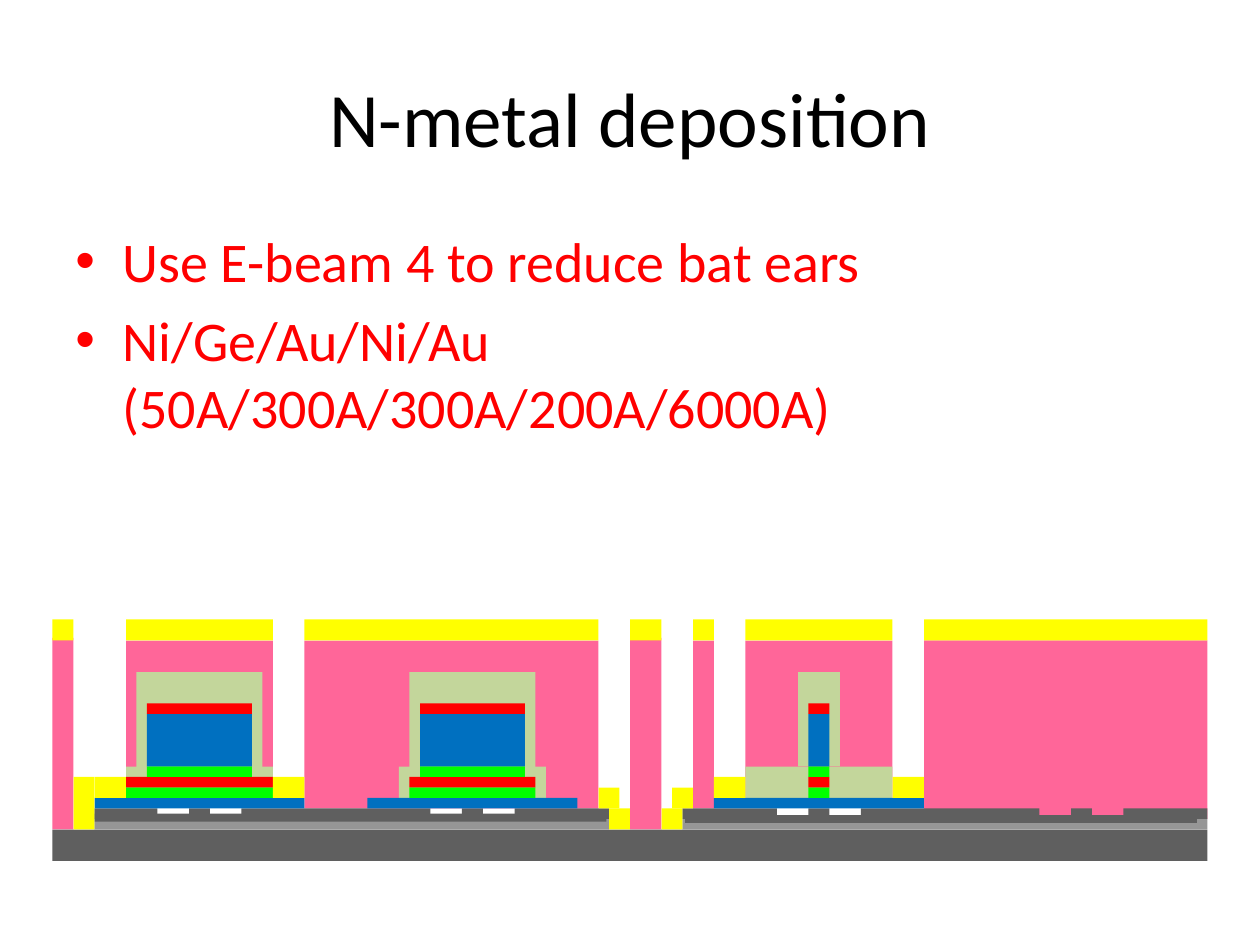
from pptx import Presentation
from pptx.dml.color import RGBColor
from pptx.enum.shapes import MSO_SHAPE
from pptx.enum.text import MSO_ANCHOR, PP_ALIGN
from pptx.oxml.xmlchemy import OxmlElement
from pptx.util import Emu, Pt

RECT = MSO_SHAPE.RECTANGLE
TOP, MIDDLE = MSO_ANCHOR.TOP, MSO_ANCHOR.MIDDLE
LEFT, CENTER = PP_ALIGN.LEFT, PP_ALIGN.CENTER

EMU_PER_PX = 9525  # 96 px to the inch; the drawing sits on an 8 px grid
FONT = "Calibri"

RESIST = "FF6699"
PASSIVATION = "C3D69B"
DARK_GREY = "5F5F5F"
LIGHT_GREY = "969696"
BLUE = "0070C0"
RED = "FF0000"
GREEN = "00FF00"
METAL = "FFFF00"

# Spans (left, width) shared by several layers
MESAS = [(112, 80), (320, 80), (616, 16)]
BASES = [(96, 112), (312, 96), (616, 16)]
METAL_TOPS = [(40, 16), (96, 112), (232, 224), (480, 24),
              (528, 16), (568, 112), (704, 216)]

# Layers from back to front: colour, top, height, spans
LAYERS = [
    # Photoresist
    (RESIST, 488, 120, [(96, 112), (568, 112)]),
    (RESIST, 488, 128, [(232, 224), (528, 16)]),
    (RESIST, 488, 136, [(704, 216)]),
    (RESIST, 486, 146, [(40, 16), (480, 24)]),
    # Passivation
    (PASSIVATION, 512, 72, [(608, 32)]),
    (PASSIVATION, 512, 80, [(104, 96), (312, 96)]),
    (PASSIVATION, 584, 24, [(96, 112), (304, 112), (568, 112)]),
    # Substrate and lower layers
    (LIGHT_GREY, 624, 8, [(72, 392), (520, 400)]),
    (DARK_GREY, 616, 8, [(72, 48), (144, 16), (184, 144), (352, 16),
                         (392, 72), (520, 72), (616, 16), (656, 136),
                         (816, 16), (856, 64)]),
    (DARK_GREY, 632, 24, [(40, 880)]),
    (DARK_GREY, 620, 6, [(72, 390)]),
    (DARK_GREY, 621, 6, [(522, 390)]),
    # Device stacks
    (BLUE, 608, 8, [(72, 160), (280, 160), (544, 160)]),
    (GREEN, 600, 8, BASES),
    (RED, 592, 8, BASES),
    (GREEN, 584, 8, MESAS),
    (BLUE, 544, 40, MESAS),
    (RED, 536, 8, MESAS),
    # Deposited metal
    (METAL, 592, 16, [(72, 24), (208, 24), (544, 24), (680, 24)]),
    (METAL, 592, 40, [(56, 16)]),
    (METAL, 600, 16, [(456, 16), (512, 16)]),
    (METAL, 616, 16, [(464, 16), (504, 16)]),
    (METAL, 472, 16, METAL_TOPS),
]


def px(n):
    return Emu(n * EMU_PER_PX)


def color(hex_value):
    return RGBColor.from_string(hex_value)


def add_layer(s, fill, top, height, spans):
    for left, width in spans:
        sp = s.shapes.add_shape(RECT, px(left), px(top), px(width), px(height))
        sp.shadow.inherit = False
        sp.fill.solid()
        sp.fill.fore_color.rgb = color(fill)
        sp.line.fill.background()


def add_text(s, box, lines, size, font_color, align=LEFT, anchor=TOP):
    tf = s.shapes.add_textbox(*map(px, box)).text_frame
    tf.word_wrap = True
    tf.vertical_anchor = anchor
    tf.text = "\n".join(lines)
    for p in tf.paragraphs:
        p.alignment = align
        p.font.name = FONT
        p.font.size = Pt(size)
        p.font.color.rgb = color(font_color)
    return tf


def add_bullets(tf, indent, space_before):
    for p in tf.paragraphs:
        p.space_before = Pt(space_before)
        pPr = p._p.get_or_add_pPr()
        pPr.set("marL", str(px(indent)))
        pPr.set("indent", str(-px(indent)))
        font = OxmlElement("a:buFont")
        font.set("typeface", "Arial")
        bullet = OxmlElement("a:buChar")
        bullet.set("char", "•")
        for element in (font, bullet):
            pPr.insert_element_before(element, "a:tabLst", "a:defRPr", "a:extLst")


def main():
    prs = Presentation()
    prs.slide_width, prs.slide_height = px(960), px(720)
    s = prs.slides.add_slide(prs.slide_layouts[6])

    # Cross-section
    for layer in LAYERS:
        add_layer(s, *layer)

    # Title and notes on the process
    add_text(s, (48, 29, 864, 120), ["N-metal deposition"], 44, "000000",
             CENTER, MIDDLE)
    body = add_text(s, (48, 168, 864, 475),
                    ["Use E-beam 4 to reduce bat ears",
                     "Ni/Ge/Au/Ni/Au (50A/300A/300A/200A/6000A)"],
                    32, RED)
    add_bullets(body, 36, 6.4)

    prs.save("out.pptx")


if __name__ == "__main__":
    main()
